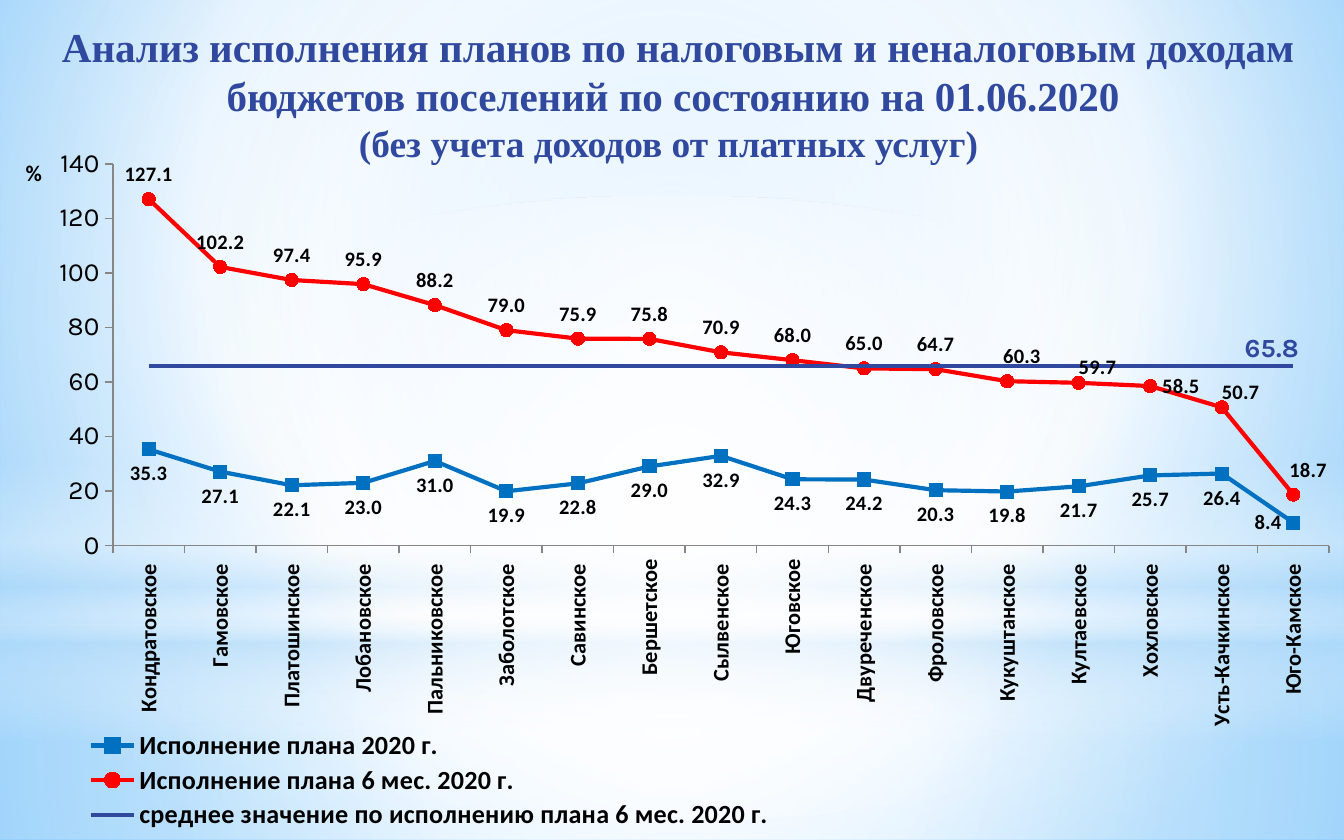
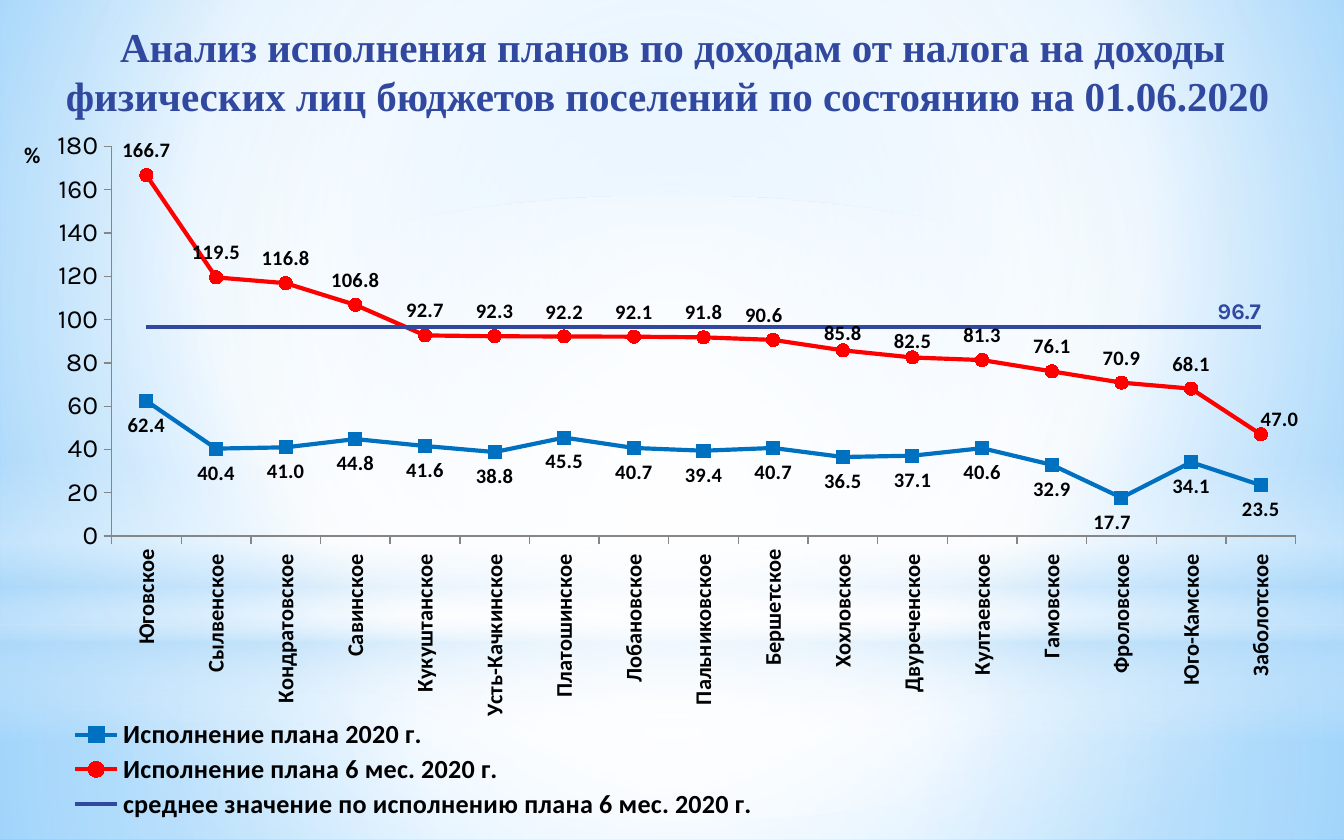
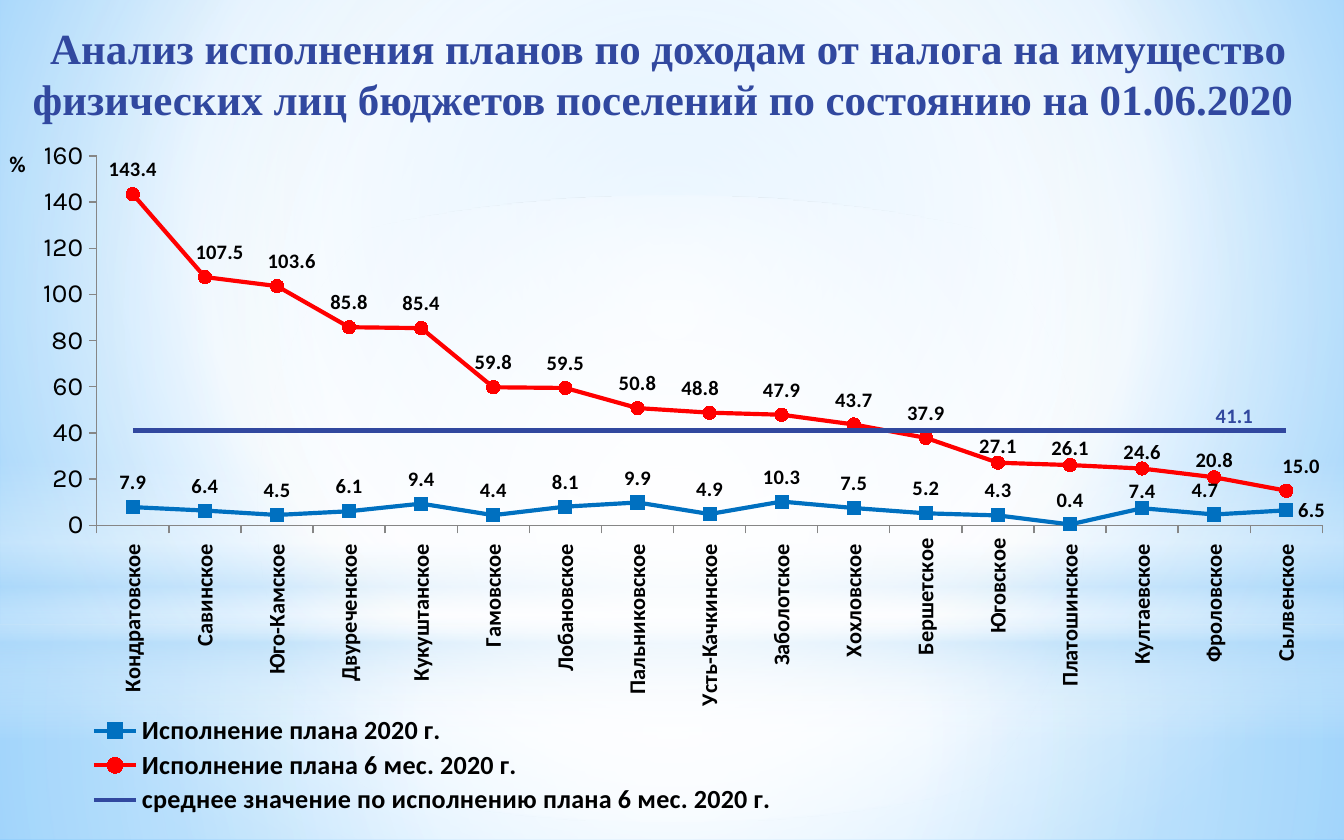
from dataclasses import dataclass

from pptx import Presentation
from pptx.chart.data import CategoryChartData
from pptx.dml.color import RGBColor
from pptx.enum import chart as ch, shapes, text
from pptx.oxml import parse_xml
from pptx.oxml.ns import nsdecls, qn
from pptx.util import Inches, Pt


@dataclass(frozen=True)
class Theme:
    ink: str = "000000"
    accent: str = "31489F"
    year: str = "0070C0"
    half: str = "FF0000"
    axis: str = "868686"
    title_font: str = "Times New Roman"
    body_font: str = "Calibri"
    number_font: str = "Karla"
    subtitle_size: int = 20
    chart_size: int = 18
    legend_size: int = 14
    scale_size: int = 14
    category_size: int = 12
    label_size: int = 11
    line_width: float = 2.25
    marker_size: int = 7


THEME = Theme()
WIDTH, HEIGHT = 10, 6.25
CHART_HEIGHT = 5.64
YEAR_NAME = "Исполнение плана 2020 г."
HALF_NAME = "Исполнение плана 6 мес. 2020 г."
MEAN_NAME = "среднее значение по исполнению плана 6 мес. 2020 г."
NO_TRAILING_SPACE = ("Юговское", "Бершетское")

WHITE, SKY = "FFFFFF", "B4DCFA"
BACKGROUND = [(0, "9ED5FF"), (60, WHITE), (100, "5BB9FF")]
# preset, top, height, gradient stops (position, colour, opacity), round or not
BANDS = [
    (shapes.MSO_SHAPE.RECTANGLE, 4.65, 1.6,
     [(0, WHITE, 91), (37, WHITE, 76), (100, SKY, 79)], True),
    (shapes.MSO_SHAPE.RECTANGLE, 0, 4.65,
     [(0, WHITE, 89), (48, WHITE, 62), (100, SKY, 79)], True),
    (shapes.MSO_SHAPE.RECTANGLE, 3.43, 2.08,
     [(0, WHITE, 0), (29, WHITE, 30), (45, SKY, 40), (55, WHITE, 26),
      (65, SKY, 60), (100, WHITE, 0)], False),
    (shapes.MSO_SHAPE.OVAL, 1.46, 4.65, [(0, WHITE), (56, WHITE, 0)], True),
]

ABOVE, BELOW = ch.XL_LABEL_POSITION.ABOVE, ch.XL_LABEL_POSITION.BELOW
BEFORE, AFTER = ch.XL_LABEL_POSITION.LEFT, ch.XL_LABEL_POSITION.RIGHT
# Label offsets in inches from the usual place
NONE, LEFT, RIGHT, DOWN, CORNER = (0, 0), (-0.07, 0), (0.11, 0), (0, 0.06), (0.14, 0.07)

# year_moves and half_moves: settlement -> label position and offset
SLIDES = [
    dict(
        title="Анализ исполнения планов по налоговым и неналоговым доходам "
              "бюджетов поселений по состоянию на 01.06.2020 ",
        subtitle="(без учета доходов от платных услуг)  ",
        title_size=22, title_span=(0.2, 9.69),
        chart_corner=(0, 0.61), chart_width=10, plot=(0.84, 0.61, 9.05, 2.84),
        legend_left=0.55, top=140,
        mean=65.8, mean_font=(THEME.number_font, THEME.scale_size),
        mean_at="Юго-Камское", mean_shift=-0.16, year_position=BELOW,
        rows={
            "Кондратовское": (35.3, 127.1), "Гамовское": (27.1, 102.2),
            "Платошинское": (22.1, 97.4), "Лобановское": (23, 95.9),
            "Пальниковское": (31, 88.2), "Заболотское": (19.9, 79),
            "Савинское": (22.8, 75.9), "Бершетское": (29, 75.8),
            "Сылвенское": (32.9, 70.9), "Юговское": (24.3, 68),
            "Двуреченское": (24.2, 65), "Фроловское": (20.3, 64.7),
            "Кукуштанское": (19.8, 60.3), "Култаевское": (21.7, 59.7),
            "Хохловское": (25.7, 58.5), "Усть-Качкинское": (26.4, 50.7),
            "Юго-Камское": (8.4, 18.7)},
        year_moves={"Юго-Камское": (BEFORE, NONE)},
        half_moves={"Кукуштанское": (ABOVE, RIGHT), "Култаевское": (ABOVE, CORNER),
                    "Хохловское": (AFTER, NONE), "Усть-Качкинское": (ABOVE, CORNER),
                    "Юго-Камское": (ABOVE, RIGHT)}),
    dict(
        title="Анализ исполнения планов по доходам от налога на доходы "
              "физических лиц бюджетов поселений по состоянию на 01.06.2020 ",
        subtitle=None,
        title_size=22, title_span=(0.2, 9.61),
        chart_corner=(0.03, 0.53), chart_width=9.76, plot=(0.8, 0.56, 8.81, 2.9),
        legend_left=0.4, top=180,
        mean=96.7, mean_font=(THEME.number_font, THEME.category_size),
        mean_at="Заболотское", mean_shift=-0.16, year_position=BELOW,
        rows={
            "Юговское": (62.4, 166.7), "Сылвенское": (40.4, 119.5),
            "Кондратовское": (41, 116.8), "Савинское": (44.8, 106.8),
            "Кукуштанское": (41.6, 92.7), "Усть-Качкинское": (38.8, 92.3),
            "Платошинское": (45.5, 92.2), "Лобановское": (40.7, 92.1),
            "Пальниковское": (39.4, 91.8), "Бершетское": (40.7, 90.6),
            "Хохловское": (36.5, 85.8), "Двуреченское": (37.1, 82.5),
            "Култаевское": (40.6, 81.3), "Гамовское": (32.9, 76.1),
            "Фроловское": (17.7, 70.9), "Юго-Камское": (34.1, 68.1),
            "Заболотское": (23.5, 47)},
        year_moves={"Фроловское": (BELOW, LEFT)},
        half_moves={"Бершетское": (ABOVE, LEFT), "Хохловское": (ABOVE, DOWN),
                    "Двуреченское": (ABOVE, DOWN), "Заболотское": (ABOVE, CORNER)}),
    dict(
        title="Анализ исполнения планов по доходам от налога на имущество "
              "физических лиц бюджетов поселений по состоянию на 01.06.2020 ",
        subtitle=None,
        title_size=23, title_span=(0, 9.96),
        chart_corner=(0, 0.5), chart_width=10, plot=(0.72, 0.66, 9.12, 2.75),
        legend_left=0.57, top=160,
        mean=41.1, mean_font=(THEME.body_font, THEME.label_size),
        mean_at="Фроловское", mean_shift=0.15, year_position=ABOVE,
        rows={
            "Кондратовское": (7.9, 143.4), "Савинское": (6.4, 107.5),
            "Юго-Камское": (4.5, 103.6), "Двуреченское": (6.1, 85.8),
            "Кукуштанское": (9.4, 85.4), "Гамовское": (4.4, 59.8),
            "Лобановское": (8.1, 59.5), "Пальниковское": (9.9, 50.8),
            "Усть-Качкинское": (4.9, 48.8), "Заболотское": (10.3, 47.9),
            "Хохловское": (7.5, 43.7), "Бершетское": (5.2, 37.9),
            "Юговское": (4.3, 27.1), "Платошинское": (0.4, 26.1),
            "Култаевское": (7.4, 24.6), "Фроловское": (4.7, 20.8),
            "Сылвенское": (6.5, 15)},
        year_moves={"Култаевское": (ABOVE, DOWN), "Фроловское": (ABOVE, LEFT),
                    "Сылвенское": (AFTER, NONE)},
        half_moves={"Савинское": (ABOVE, RIGHT), "Юго-Камское": (ABOVE, RIGHT),
                    "Усть-Качкинское": (ABOVE, LEFT), "Юговское": (ABOVE, DOWN),
                    "Платошинское": (ABOVE, DOWN), "Култаевское": (ABOVE, DOWN),
                    "Фроловское": (ABOVE, DOWN), "Сылвенское": (ABOVE, RIGHT)}),
]


def rgb(colour):
    return RGBColor.from_string(colour)


def style_font(font, name, size, colour=THEME.ink, bold=True):
    font.name, font.size, font.bold = name, Pt(size), bold
    font.color.rgb = rgb(colour)


def stop_xml(at, colour, opacity=100):
    return (f'<a:gs pos="{at * 1000}"><a:srgbClr val="{colour}">'
            f'<a:alpha val="{opacity * 1000}"/></a:srgbClr></a:gs>')


def paint_gradient(properties, stops, focus):
    """Swap a solid fill for a gradient: round with a focus, else top to bottom."""
    if focus:
        sides = " ".join(f'{side}="{value}%"' for side, value in zip("ltrb", focus))
        sides = sides.replace("%", "000")
        course = f'<a:path path="circle"><a:fillToRect {sides}/></a:path>'
    else:
        course = '<a:lin ang="5400000" scaled="0"/>'
    properties.replace(properties.find(qn("a:solidFill")), parse_xml(
        f'<a:gradFill {nsdecls("a")} rotWithShape="1"><a:gsLst>'
        f'{"".join(stop_xml(*stop) for stop in stops)}</a:gsLst>{course}</a:gradFill>'))


def dress_master(master, slide):
    """Give the master its background and bands, which are drawn on a slide first."""
    master.background.fill.solid()
    paint_gradient(master.element.find(".//" + qn("p:bgPr")), BACKGROUND, (20, 10, 20, 60))
    for order, (preset, top, height, stops, is_round) in enumerate(BANDS, start=2):
        band = slide.shapes.add_shape(preset, 0, Inches(top), Inches(WIDTH), Inches(height))
        band.shadow.inherit = False
        band.line.fill.background()
        band.fill.solid()
        paint_gradient(band.element.spPr, stops, [50] * 4 if is_round else None)
        master.shapes.element.insert(order, band.element)


def write_title(title, page):
    left, width = page["title_span"]
    height = 0.97 if page["subtitle"] else 0.52
    title.left, title.top, title.width, title.height = map(
        Inches, (left, 0.11, width, height))
    frame = title.text_frame
    frame.word_wrap = True
    frame.auto_size = text.MSO_AUTO_SIZE.NONE
    frame.vertical_anchor = text.MSO_ANCHOR.TOP
    heading = frame.paragraphs[0]
    heading.alignment = text.PP_ALIGN.CENTER
    for words, size in ((page["title"], page["title_size"]),
                        (page["subtitle"], THEME.subtitle_size)):
        if words:
            if heading.runs:
                heading.add_line_break()
            run = heading.add_run()
            run.text = words
            style_font(run.font, THEME.title_font, size, THEME.accent)


def set_layout(parent, after, box, place, edge=True, inner=False):
    """Place a chart part by inches; after is the tag it follows, if any."""
    old = parent.find(qn("c:layout"))
    if old is not None:
        parent.remove(old)
    modes = '<c:xMode val="edge"/><c:yMode val="edge"/>' if edge else ""
    target = '<c:layoutTarget val="inner"/>' if inner else ""
    values = "".join(f'<c:{key} val="{length / size:.4f}"/>'
                     for key, length, size in zip("xywh", place, box[2:] * 2))
    layout = parse_xml(f'<c:layout {nsdecls("c")}><c:manualLayout>{target}{modes}{values}'
                       '</c:manualLayout></c:layout>')
    if after:
        parent.find(qn(after)).addnext(layout)
    else:
        parent.insert(0, layout)
    return layout


def style_series(series, colour, marker):
    series.smooth = False
    series.format.line.color.rgb = rgb(colour)
    series.format.line.width = Pt(THEME.line_width)
    series.marker.style = marker
    if marker != ch.XL_MARKER_STYLE.NONE:
        series.marker.size = THEME.marker_size
        for part in (series.marker.format, series.marker.format.line):
            part.fill.solid()
            part.fill.fore_color.rgb = rgb(colour)


def label_series(series, position):
    labels = series.data_labels
    labels.show_value = True
    labels.number_format, labels.number_format_is_linked = "#,##0.0", False
    labels.position = position
    style_font(labels.font, THEME.body_font, THEME.label_size)


def move_labels(series, box, names, moves, font, size, colour=THEME.ink):
    for name, (position, shift) in moves.items():
        index = names.index(name)
        label = series.points[index].data_label
        style_font(label.font, font, size, colour)
        label.position = position
        entry = next(e for e in series.data_labels._element.findall(qn("c:dLbl"))
                     if e.find(qn("c:idx")).get("val") == str(index))
        layout = set_layout(entry, "c:idx", box, shift, edge=False)
        layout.addnext(parse_xml(
            f'<c:numFmt {nsdecls("c")} formatCode="#,##0.0" sourceLinked="0"/>'))


def style_axes(chart, box, top, plot):
    for axis in (chart.category_axis, chart.value_axis):
        axis.has_major_gridlines = False
        axis.major_tick_mark = ch.XL_TICK_MARK.OUTSIDE
        axis.minor_tick_mark = ch.XL_TICK_MARK.NONE
        axis.format.line.color.rgb = rgb(THEME.axis)
        axis.format.line.width = Pt(0.75)
    settlements, scale = chart.category_axis, chart.value_axis
    style_font(settlements.tick_labels.font, THEME.body_font, THEME.category_size)
    settlements._element.find(f'{qn("c:txPr")}/{qn("a:bodyPr")}').set("rot", "-5400000")
    scale.minimum_scale, scale.maximum_scale, scale.major_unit = 0, top, 20
    scale.tick_labels.number_format = "#,##0"
    scale.tick_labels.number_format_is_linked = False
    style_font(scale.tick_labels.font, THEME.number_font, THEME.scale_size, bold=False)
    unit = scale.axis_title
    run = unit.text_frame.paragraphs[0].add_run()
    run.text = "%"
    style_font(run.font, THEME.body_font, THEME.category_size)
    unit.element.find(".//" + qn("a:bodyPr")).set("rot", "0")
    set_layout(unit.element, "c:tx", box, (plot[0] - 0.68, plot[1] - 0.08))


def style_legend(chart, box, left):
    chart.has_legend = True
    legend = chart.legend
    legend.position = ch.XL_LEGEND_POSITION.BOTTOM
    legend.include_in_layout = False
    style_font(legend.font, THEME.body_font, THEME.legend_size)
    set_layout(legend._element, "c:legendPos", box, (left, 4.8, 5.3, 0.79))


def add_plan_chart(slide, page):
    box = (*page["chart_corner"], page["chart_width"], CHART_HEIGHT)
    names = list(page["rows"])
    year_values, half_values = zip(*page["rows"].values())
    data = CategoryChartData(number_format="0.0")
    data.categories = [name if name in NO_TRAILING_SPACE else name + " " for name in names]
    data.add_series(YEAR_NAME, year_values)
    data.add_series(HALF_NAME, half_values)
    data.add_series(MEAN_NAME, [page["mean"]] * len(names))
    chart = slide.shapes.add_chart(
        ch.XL_CHART_TYPE.LINE_MARKERS, *map(Inches, box), data).chart
    chart.has_title = False
    style_font(chart.font, THEME.number_font, THEME.chart_size, bold=False)
    chart.plots[0].vary_by_categories = False
    set_layout(chart._chartSpace.find(".//" + qn("c:plotArea")), None, box,
               page["plot"], inner=True)
    style_axes(chart, box, page["top"], page["plot"])
    style_legend(chart, box, page["legend_left"])

    year, half, mean = chart.plots[0].series
    style_series(year, THEME.year, ch.XL_MARKER_STYLE.SQUARE)
    style_series(half, THEME.half, ch.XL_MARKER_STYLE.CIRCLE)
    style_series(mean, THEME.accent, ch.XL_MARKER_STYLE.NONE)
    for series, position, moves in ((year, page["year_position"], page["year_moves"]),
                                    (half, ABOVE, page["half_moves"])):
        label_series(series, position)
        move_labels(series, box, names, moves, THEME.body_font, THEME.label_size)
    mean.data_labels.show_value = False
    mean_move = {page["mean_at"]: (ABOVE, (page["mean_shift"], 0.03))}
    move_labels(mean, box, names, mean_move, *page["mean_font"], THEME.accent)


def main():
    deck = Presentation()
    deck.slide_width, deck.slide_height = Inches(WIDTH), Inches(HEIGHT)
    title_only = deck.slide_layouts.get_by_name("Title Only")
    for page in SLIDES:
        slide = deck.slides.add_slide(title_only)
        if page is SLIDES[0]:
            dress_master(deck.slide_master, slide)
        write_title(slide.shapes.title, page)
        add_plan_chart(slide, page)
    deck.save("out.pptx")


if __name__ == "__main__":
    main()
